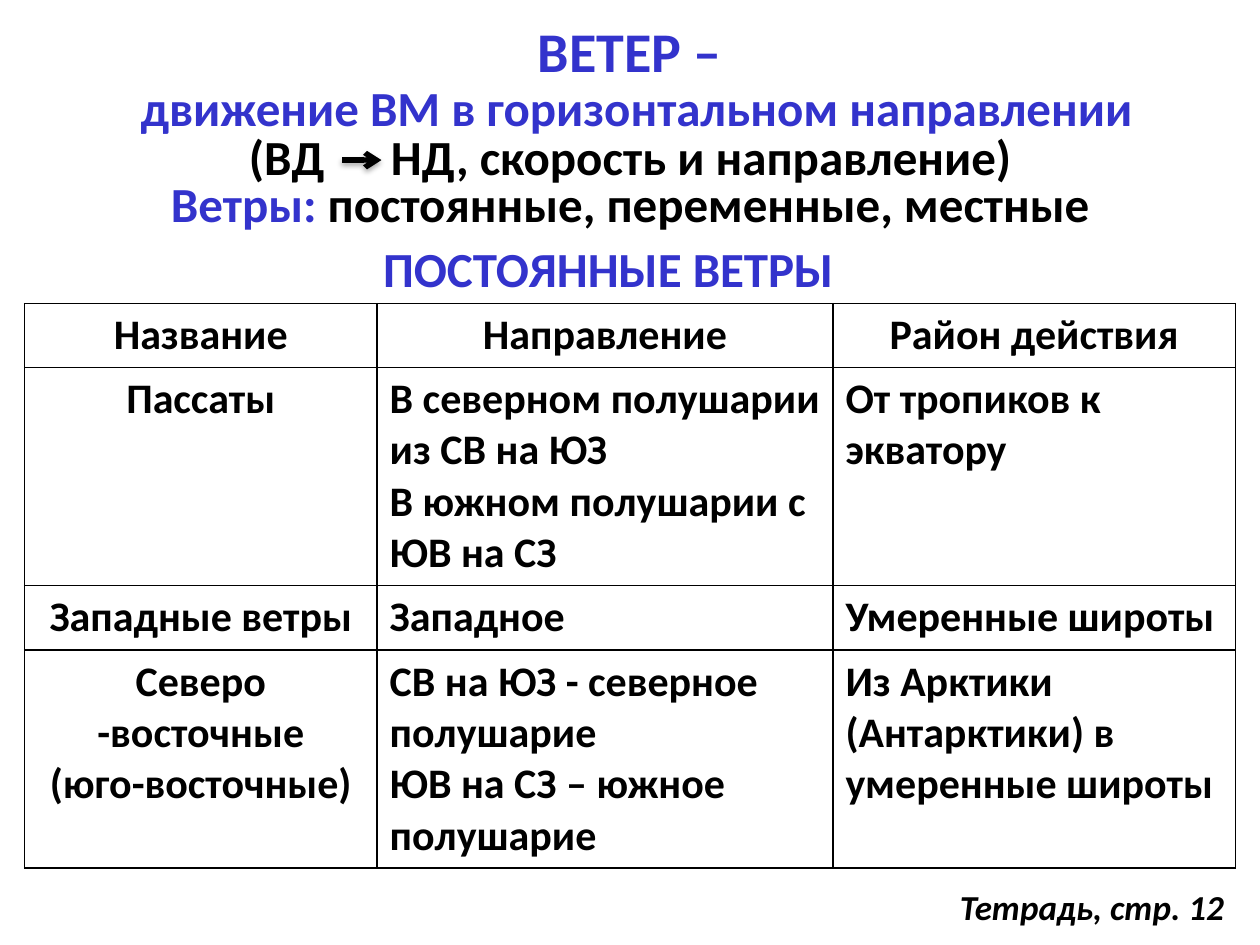
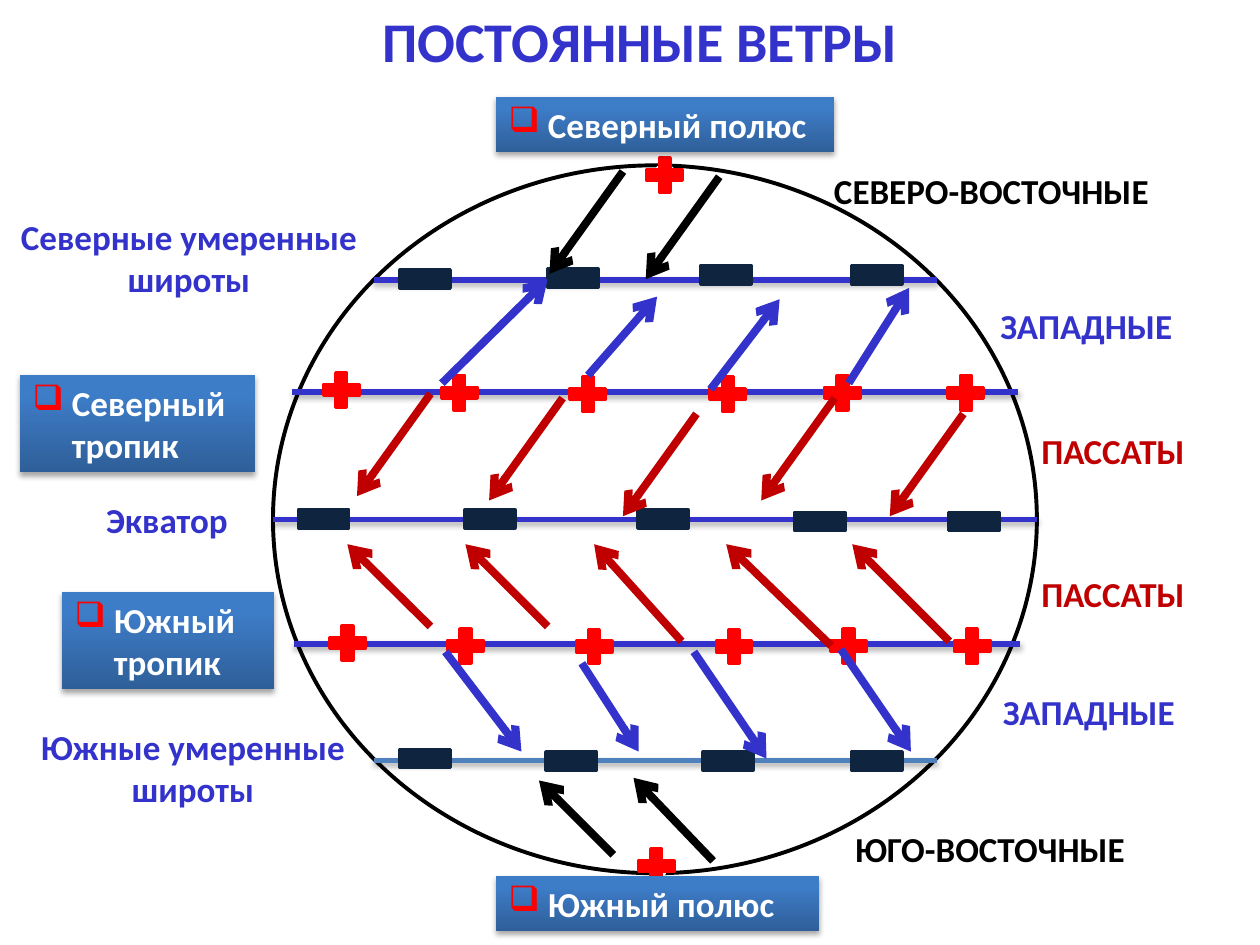
import copy
from dataclasses import dataclass

import pptx
import pptx.util
import pptx.dml.color
import pptx.enum.shapes
import pptx.enum.text
import pptx.oxml
import pptx.oxml.ns
from lxml import etree

Pt = pptx.util.Pt
SHAPE = pptx.enum.shapes.MSO_SHAPE
ALIGN = pptx.enum.text.PP_ALIGN
ANCHOR = pptx.enum.text.MSO_ANCHOR
qn = pptx.oxml.ns.qn


@dataclass(frozen=True)
class Theme:
    font: str = "Calibri"
    blue: str = "3333CC"
    black: str = "000000"
    white: str = "FFFFFF"
    red: str = "FF0000"
    trade: str = "C00000"
    low: str = "0F243E"
    steel: str = "4F81BD"
    plate_dark: str = "2F5F99"
    plate_light: str = "3D7CC7"
    title: int = 32
    heading: int = 28
    cell: int = 24
    label: int = 20


THEME = Theme()


@dataclass(frozen=True)
class Box:
    left: float
    top: float
    width: float
    height: float

    def inner(self, left, top, width, height):
        return Box(self.left + left, self.top + top, width, height)

    def lengths(self):
        return [Pt(round(n, 2)) for n in (self.left, self.top, self.width, self.height)]


PAGE = Box(0, 0, 720, 540)


def rgb(colour):
    return pptx.dml.color.RGBColor.from_string(colour)


# Text
def add_span(para, text, size, colour, italic=False):
    span = para.add_run()
    span.text = text
    font = span.font
    font.name, font.size, font.bold = THEME.font, Pt(size), True
    font.italic = italic or None
    font.color.rgb = rgb(colour)
    return span


def break_line(para, span):
    para.add_line_break()
    para._p[-1].append(copy.deepcopy(span._r.rPr))


def add_label(page, box, text, colour, size=THEME.label, align=ALIGN.LEFT, italic=False, wrap=True):
    frame = page.shapes.add_textbox(*box.lengths()).text_frame
    frame.word_wrap = wrap
    frame.paragraphs[0].alignment = align
    add_span(frame.paragraphs[0], text, size, colour, italic)


def format_title(page, box, anchor):
    title = page.shapes.title
    title.left, title.top, title.width, title.height = box.lengths()
    frame = title.text_frame
    frame.auto_size = pptx.enum.text.MSO_AUTO_SIZE.NONE
    frame.word_wrap = True
    frame.vertical_anchor = anchor
    para = frame.paragraphs[0]
    para.alignment = ALIGN.CENTER
    return para


# Shapes and lines
def set_effects(shape, shadow):
    effects = etree.SubElement(shape._element.spPr, qn("a:effectLst"))
    if shadow:
        outer = etree.SubElement(effects, qn("a:outerShdw"), blurRad="40000", dist="23000",
                                 dir="5400000", rotWithShape="0")
        colour = etree.SubElement(outer, qn("a:srgbClr"), val=THEME.black)
        etree.SubElement(colour, qn("a:alpha"), val="35000")


def add_line(page, box, start, end, colour, width, arrow=False, shadow=False):
    points = [Pt(round(n, 2)) for n in (box.left + start[0], box.top + start[1],
                                       box.left + end[0], box.top + end[1])]
    line = page.shapes.add_connector(pptx.enum.shapes.MSO_CONNECTOR.STRAIGHT, *points)
    line.line.color.rgb = rgb(colour)
    line.line.width = Pt(width)
    if arrow:
        etree.SubElement(line._element.spPr.find(qn("a:ln")), qn("a:tailEnd"), type="arrow")
    set_effects(line, shadow)


def add_figure(page, kind, box, fill, outline, width=2):
    figure = page.shapes.add_shape(kind, *box.lengths())
    figure.shadow.inherit = False
    if fill:
        figure.fill.solid()
        figure.fill.fore_color.rgb = rgb(fill)
    else:
        figure.fill.background()
    figure.line.color.rgb = rgb(outline)
    figure.line.width = Pt(width)


def add_plate(page, box, text):
    plate = page.shapes.add_shape(SHAPE.RECTANGLE, *box.lengths())
    plate.fill.gradient()
    plate.fill.gradient_angle = 90
    stops = zip(plate.fill.gradient_stops, (THEME.plate_dark, THEME.plate_light), (0, 0.8))
    for stop, colour, position in stops:
        stop.color.rgb = rgb(colour)
        stop.position = position
    plate.line.fill.background()
    set_effects(plate, shadow=True)
    frame = plate.text_frame
    frame.word_wrap = True
    frame.vertical_anchor = ANCHOR.TOP
    para = frame.paragraphs[0]
    para.alignment = ALIGN.LEFT
    properties = para._p.get_or_add_pPr()
    properties.set("marL", str(Pt(22.5)))
    properties.set("indent", str(-Pt(22.5)))
    bullet_colour = etree.SubElement(properties, qn("a:buClr"))
    etree.SubElement(bullet_colour, qn("a:srgbClr"), val=THEME.red)
    etree.SubElement(properties, qn("a:buChar"), char="❑")
    add_span(para, text, THEME.label, THEME.white)


# Slide 1: definition and table of winds
def fill_definition(page, box):
    para = format_title(page, box, ANCHOR.MIDDLE)
    para.line_spacing = 0.8
    size = THEME.heading
    break_line(para, add_span(para, "ВЕТЕР –", THEME.title, THEME.blue))
    add_span(para, " ", THEME.title, THEME.blue)
    break_line(para, add_span(para, "движение ВМ в горизонтальном направлении", size, THEME.blue))
    add_span(para, "(ВД", size, THEME.black)
    gap = add_span(para, " ", size, THEME.black)
    gap._r.rPr.set("spc", "3160")  # room for the arrow
    break_line(para, add_span(para, "НД, скорость и направление)", size, THEME.black))
    add_span(para, "Ветры: ", size, THEME.blue)
    add_span(para, "постоянные, переменные, местные", size, THEME.black)
    add_line(page, box, (187, 82), (209.5, 82), THEME.black, 3, arrow=True, shadow=True)


def add_borders(cell):
    properties = cell._tc.get_or_add_tcPr()
    for side in ("lnL", "lnR", "lnT", "lnB"):
        border = etree.SubElement(properties, qn("a:" + side), w=str(Pt(1)))
        fill = etree.SubElement(border, qn("a:solidFill"))
        etree.SubElement(fill, qn("a:srgbClr"), val=THEME.black)


def add_wind_table(page, box):
    rows = [
        ("Название", "Направление", "Район действия"),
        ("Пассаты", "В северном полушарии из СВ на ЮЗ\nВ южном полушарии с ЮВ на СЗ",
         "От тропиков к экватору"),
        ("Западные ветры", "Западное", "Умеренные широты"),
        ("Северо -восточные\n(юго-восточные)",
         "СВ на ЮЗ - северное полушарие\nЮВ на СЗ – южное полушарие",
         "Из Арктики (Антарктики) в умеренные широты"),
    ]
    table = page.shapes.add_table(len(rows), 3, *box.lengths()).table
    table.first_row = table.horz_banding = False
    for column, width in zip(table.columns, (201.5, 260.5, 230)):
        column.width = Pt(width)
    for row, height in zip(table.rows, (36.5, 124.5, 37, 124.5)):
        row.height = Pt(height)
    for row_index, texts in enumerate(rows):
        for column_index, text in enumerate(texts):
            cell = table.cell(row_index, column_index)
            add_borders(cell)
            cell.fill.background()
            centred = row_index == 0 or column_index == 0
            for line_index, line in enumerate(text.split("\n")):
                frame = cell.text_frame
                para = frame.add_paragraph() if line_index else frame.paragraphs[0]
                para.alignment = ALIGN.CENTER if centred else ALIGN.LEFT
                add_span(para, line, THEME.cell, THEME.black)


def build_table_slide(deck):
    page = deck.slides.add_slide(deck.slide_layouts[5])
    fill_definition(page, PAGE.inner(8.5, 9.5, 703, 130.5))
    add_wind_table(page, PAGE.inner(14, 173.5, 692, 322.5))
    add_label(page, PAGE.inner(170, 132.5, 355, 41), "ПОСТОЯННЫЕ ВЕТРЫ", THEME.blue,
              THEME.heading, ALIGN.CENTER)
    add_label(page, PAGE.inner(541.5, 502.5, 166.5, 31.5), "Тетрадь, стр. 12", THEME.black,
              italic=True, wrap=False)


# Slide 2: globe with pressure belts and winds
def add_sign(page, globe, high, x, y):
    width, height = (27.5, 26.5) if high else (39, 44)
    kind, colour = (SHAPE.MATH_PLUS, THEME.red) if high else (SHAPE.MATH_MINUS, THEME.low)
    add_figure(page, kind, globe.inner(x - width / 2, y - height / 2, width, height), colour, colour)


def add_belts(page, globe):
    add_figure(page, SHAPE.OVAL, globe, None, THEME.black, 2.25)
    for x, y in ((219.5, 0), (215.5, 400.5)):
        add_figure(page, SHAPE.OVAL, globe.inner(x, y, 8.5, 5.5), THEME.white, THEME.white)
    tropic = [(39, -1), (106.5, 0.5), (180, 1), (260, 1), (325.5, 0.5), (396, 0.5)]
    # height, line start, line end, line colour, high pressure, signs (x, offset from line)
    belts = [
        (202.5, 0, 436.5, THEME.blue, False,
         [(29, -0.5), (124, -0.5), (223, -0.5), (312.5, 1), (400.5, 1)]),
        (129.5, 11, 426, THEME.blue, True, tropic),
        (273.5, 12, 427, THEME.blue, True, [(x + 3.5, y + 0.5) for x, y in tropic]),
        (65.5, 57.5, 379.5, THEME.blue, False, [(87, -0.5), (171.5, -1), (259, -3), (345, -3)]),
        (340, 57.5, 379.5, THEME.steel, False, [(87, -1), (170.5, 0.5), (260, 0.5), (345, 0.5)]),
    ]
    for y, start, end, colour, high, signs in belts:
        add_line(page, globe, (start, y), (end, y), colour, 3, shadow=True)
        for x, offset in signs:
            add_sign(page, globe, high, x, y + offset)
    for pole in ((224, 5.5), (219, 400.5)):
        add_sign(page, globe, True, *pole)


def add_winds(page, globe):
    def slanted(starts):
        return [(x, y, x - 42, y + 58.5) for x, y in starts]

    winds = {
        THEME.trade: slanted([(90, 130.5), (165.5, 133), (242, 142), (321, 133), (394.5, 142)]) + [
            (90, 263.5, 42.5, 216.5), (157, 263.5, 110, 216.5), (233.5, 272, 183.5, 216.5),
            (319, 274.5, 259, 216.5), (386.5, 272, 331, 216.5)],
        THEME.blue: [
            (96.5, 124.5, 157, 65), (180, 120, 219.5, 75),
            (250, 128, 289.5, 76.5), (329, 124.5, 363.5, 70),
            (98.5, 278, 142, 335), (176.5, 284.5, 209, 335),
            (240.5, 278, 282, 339), (324.5, 276.5, 364.5, 335)],
        THEME.black: slanted([(200, 3.5), (255, 6.5)]) + [
            (194.5, 394, 152, 351.5), (251.5, 397.5, 206, 350)],
    }
    for colour, arrows in winds.items():
        for x1, y1, x2, y2 in arrows:
            add_line(page, globe, (x1, y1), (x2, y2), colour, 4.5, arrow=True)


def add_captions(page, box):
    for text, left, top, width, height in [
            ("Северный тропик", 11.5, 214.5, 134.5, 55.5),
            ("Южный тропик", 35.5, 338.5, 121, 55.5),
            ("Северный полюс", 283.5, 55.5, 193, 31.5),
            ("Южный полюс", 283.5, 500.5, 184.5, 31.5)]:
        add_plate(page, box.inner(left, top, width, height), text)
    for text, left, top, width, colour in [
            ("Экватор", 53.5, 281.5, 93, THEME.blue),
            ("ПАССАТЫ", 588, 242, 115, THEME.trade),
            ("ПАССАТЫ", 588, 323.5, 115, THEME.trade),
            ("ЗАПАДНЫЕ", 564.5, 170.5, 126, THEME.blue),
            ("ЗАПАДНЫЕ", 566, 391, 137, THEME.blue),
            ("СЕВЕРО-ВОСТОЧНЫЕ", 469.5, 93.5, 221, THEME.black),
            ("ЮГО-ВОСТОЧНЫЕ", 481.5, 469.5, 209, THEME.black)]:
        add_label(page, box.inner(left, top, width, 31.5), text, colour)
    for text, left, top, width in [
            ("Северные умеренные широты", 0, 119.5, 216),
            ("Южные умеренные широты", 11.5, 411, 197.5)]:
        add_label(page, box.inner(left, top, width, 55.5), text, THEME.blue, align=ALIGN.CENTER)


def build_globe_slide(deck):
    page = deck.slides.add_slide(deck.slide_layouts[5])
    para = format_title(page, PAGE.inner(11.5, 0, 708.5, 46), ANCHOR.TOP)
    add_span(para, "ПОСТОЯННЫЕ ВЕТРЫ", THEME.title, THEME.blue)
    globe = PAGE.inner(156, 94.5, 436.5, 404.5)
    add_belts(page, globe)
    add_captions(page, PAGE)
    add_winds(page, globe)


def main():
    deck = pptx.Presentation()
    deck.slide_width, deck.slide_height = Pt(PAGE.width), Pt(PAGE.height)
    build_table_slide(deck)
    build_globe_slide(deck)
    deck.save("out.pptx")


if __name__ == "__main__":
    main()
